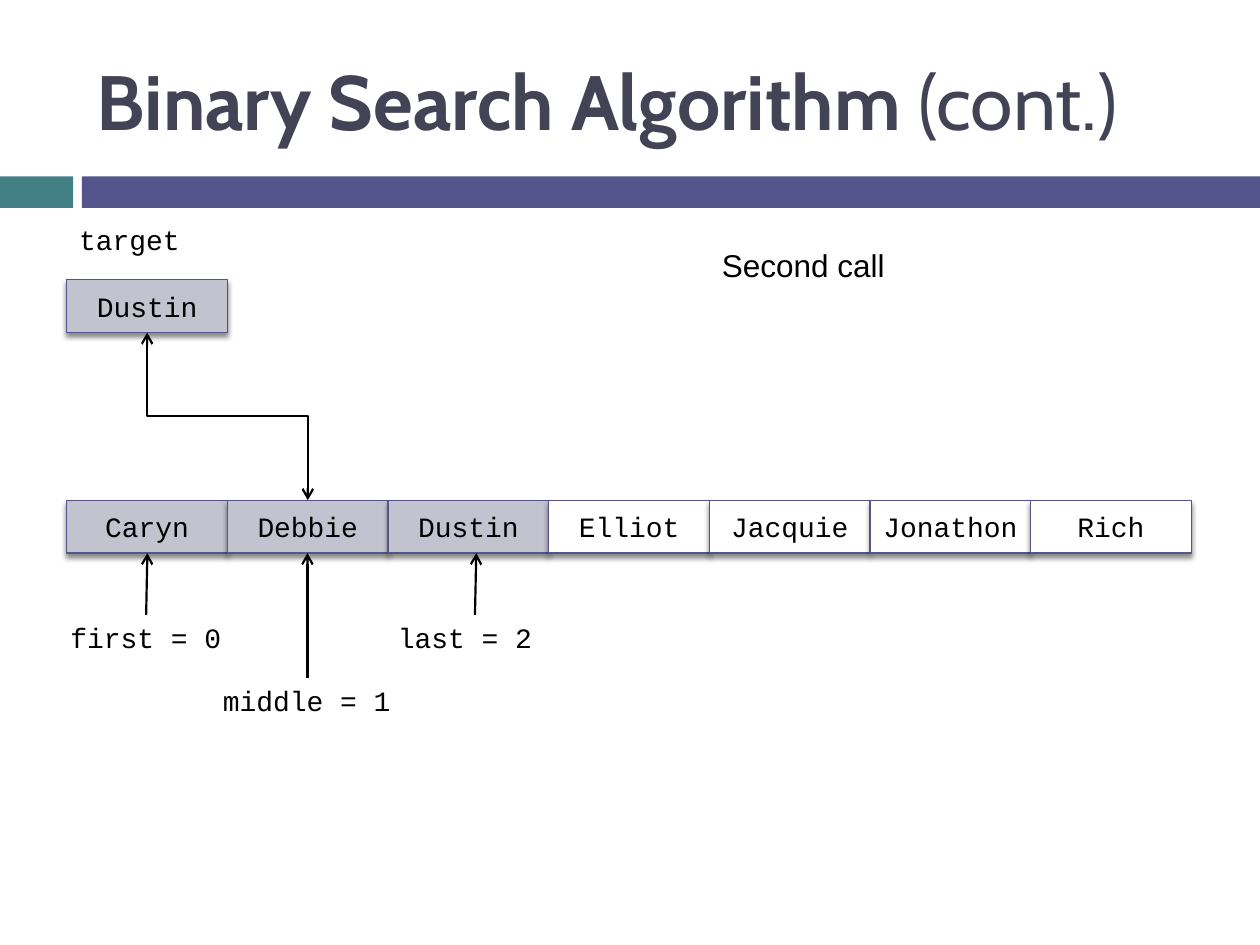
import pptx
import pptx.util
import pptx.dml.color
import pptx.enum.shapes
import pptx.enum.text
import pptx.oxml
import pptx.oxml.ns
import lxml.etree

Inches = pptx.util.Inches
Pt = pptx.util.Pt
qn = pptx.oxml.ns.qn
RECTANGLE = pptx.enum.shapes.MSO_SHAPE.RECTANGLE
CONNECTOR = pptx.enum.shapes.MSO_CONNECTOR
MIDDLE = pptx.enum.text.MSO_ANCHOR.MIDDLE
CENTER = pptx.enum.text.PP_ALIGN.CENTER

TEAL, INDIGO, TITLE = "438086", "53548A", "424456"
SEARCHED, UNSEARCHED, BLACK = "C3C3CF", "FFFFFF", "000000"
CODE_FONT = "Courier New"

NAMES = ["Caryn", "Debbie", "Dustin", "Elliot", "Jacquie", "Jonathon", "Rich"]
FIRST, LAST = 0, 2
CELL_W, CELL_H = 1.275, 0.42
ARRAY_LEFT, ARRAY_TOP, TARGET_TOP = 0.53, 3.97, 2.22


def color(hex_string):
    return pptx.dml.color.RGBColor.from_string(hex_string)


def add_bar(slide, left, top, width, height, fill):
    bar = slide.shapes.add_shape(
        RECTANGLE, Inches(left), Inches(top), Inches(width), Inches(height))
    bar.shadow.inherit = False
    bar.fill.solid()
    bar.fill.fore_color.rgb = color(fill)
    bar.line.fill.background()
    return bar


def style(paragraph, size, font, ink=BLACK):
    paragraph.font.size = Pt(size)
    paragraph.font.name = font
    paragraph.font.color.rgb = color(ink)


def add_label(slide, text, left, top, width, height=0.37,
              size=16, font=CODE_FONT, wrap=False):
    label = slide.shapes.add_textbox(
        Inches(left), Inches(top), Inches(width), Inches(height))
    label.text_frame.word_wrap = wrap
    label.text_frame.text = text
    style(label.text_frame.paragraphs[0], size, font)


def add_cell(slide, name, left, top, fill):
    cell = add_bar(slide, left, top, CELL_W, CELL_H, fill)
    cell.line.color.rgb = color(INDIGO)
    cell.line.width = Pt(0.79)
    # Soft shadow straight below the cell
    effects = cell._element.spPr.find(qn("a:effectLst"))
    effects.append(pptx.oxml.parse_xml(
        '<a:outerShdw xmlns:a="http://schemas.openxmlformats.org/drawingml/2006/main"'
        f' blurRad="{Pt(3)}" dist="{Pt(2.4)}" dir="5400000" rotWithShape="0">'
        '<a:srgbClr val="000000"><a:alpha val="45000"/></a:srgbClr></a:outerShdw>'))
    frame = cell.text_frame
    frame.word_wrap = False
    frame.vertical_anchor = MIDDLE
    frame.text = name
    frame.paragraphs[0].alignment = CENTER
    style(frame.paragraphs[0], 16, CODE_FONT)


def add_arrow(slide, kind, start, end, ends=("a:tailEnd",)):
    arrow = slide.shapes.add_connector(
        kind, *(Inches(value) for value in (*start, *end)))
    arrow.line.color.rgb = color(BLACK)
    arrow.line.width = Pt(1.25)
    properties = arrow._element.spPr
    outline = properties.find(qn("a:ln"))
    for end_tag in ends:
        lxml.etree.SubElement(outline, qn(end_tag), type="arrow")
    lxml.etree.SubElement(properties, qn("a:effectLst"))
    return arrow


def add_header(slide, left, top, width, height):
    # Divider bars
    add_bar(slide, 0, 1.4, 0.58, 0.25, TEAL)
    add_bar(slide, 0.65, 1.4, 9.35, 0.25, INDIGO)
    # Title with a bold main part
    title = slide.shapes.add_textbox(
        Inches(left), Inches(top), Inches(width), Inches(height))
    title.text_frame.word_wrap = True
    title.text_frame.vertical_anchor = MIDDLE
    heading = title.text_frame.paragraphs[0]
    style(heading, 44, "Cabin", TITLE)
    for text, bold in (("Binary Search Algorithm ", True), ("(cont.)", False)):
        part = heading.add_run()
        part.text = text
        part.font.bold = bold


def add_array(slide, left, top):
    for index, name in enumerate(NAMES):
        fill = SEARCHED if FIRST <= index <= LAST else UNSEARCHED
        add_cell(slide, name, left + index * CELL_W, top, fill)


def add_target(slide, left, top):
    add_cell(slide, "Dustin", left, top, SEARCHED)
    add_label(slide, "target", left, top - 0.5, 1.01)


def add_pointers(slide, bottom):
    # Text, label left, label top, label width, arrow start x, arrow end x
    pointers = [
        ("first = 0", 0.46, 4.88, 1.42, 1.16, 1.17),
        ("last = 2", 3.06, 4.88, 1.28, 3.77, 3.78),
        ("middle = 1", 1.67, 5.38, 1.55, 2.44, 2.44),
    ]
    for text, left, top, width, start_x, end_x in pointers:
        add_arrow(slide, CONNECTOR.STRAIGHT, (start_x, top), (end_x, bottom))
        add_label(slide, text, left, top, width)


def add_comparison(slide, start, end):
    # The elbow leaves vertically: a quarter turn of a box about the same centre
    center_x, center_y = (start[0] + end[0]) / 2, (start[1] + end[1]) / 2
    half_w, half_h = (end[1] - start[1]) / 2, (end[0] - start[0]) / 2
    elbow = add_arrow(
        slide, CONNECTOR.ELBOW,
        (center_x - half_w, center_y - half_h),
        (center_x + half_w, center_y + half_h),
        ends=("a:headEnd", "a:tailEnd"))
    transform = elbow._element.spPr.find(qn("a:xfrm"))
    transform.set("rot", "16200000")
    transform.set("flipH", "1")


def main():
    deck = pptx.Presentation()
    deck.slide_width, deck.slide_height = Inches(10), Inches(7.5)
    slide = deck.slides.add_slide(deck.slide_layouts[6])

    add_header(slide, 0.67, 0.25, 8.92, 1.08)
    add_array(slide, ARRAY_LEFT, ARRAY_TOP)
    add_target(slide, ARRAY_LEFT, TARGET_TOP)
    add_pointers(slide, ARRAY_TOP + CELL_H)
    add_comparison(slide,
                   (ARRAY_LEFT + CELL_W / 2, TARGET_TOP + CELL_H),
                   (ARRAY_LEFT + 1.5 * CELL_W, ARRAY_TOP))
    add_label(slide, "Second call", 5.63, 1.9, 3.12, 0.4,
              size=18, font="Arial", wrap=True)

    deck.save("out.pptx")


if __name__ == "__main__":
    main()
